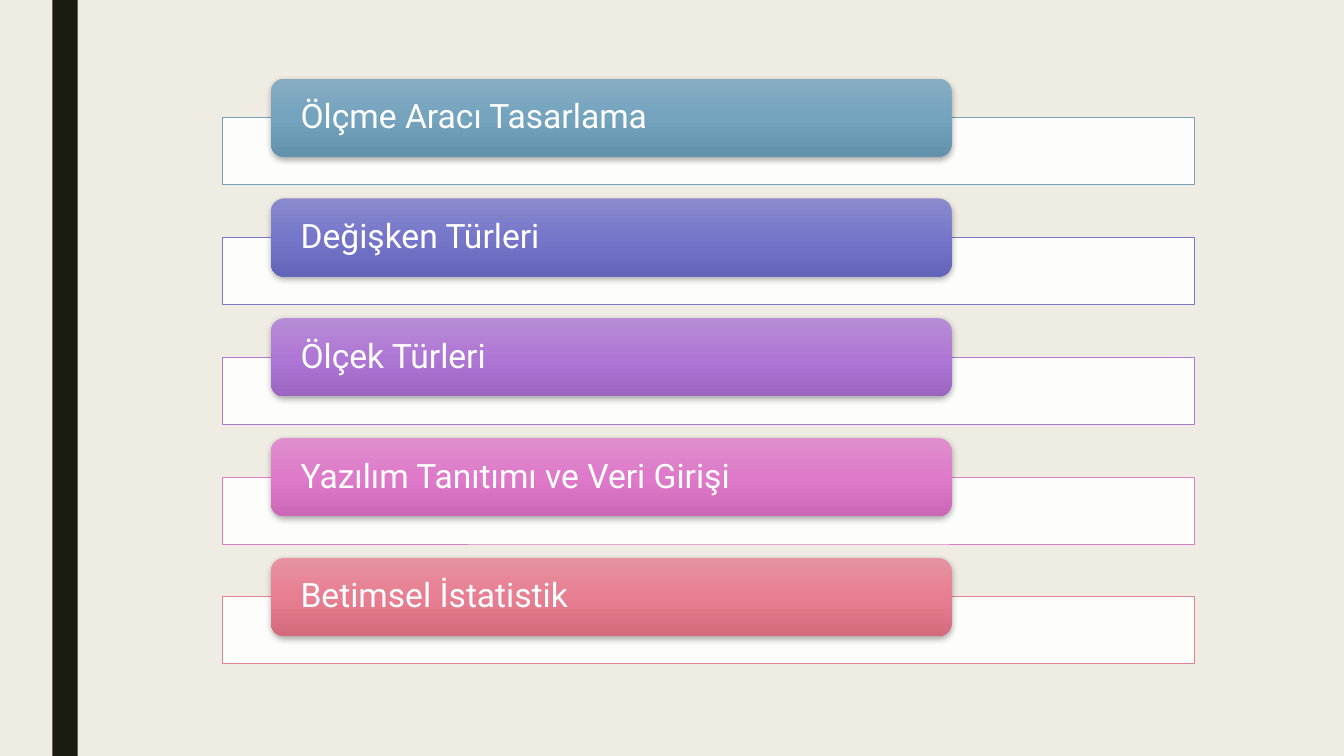
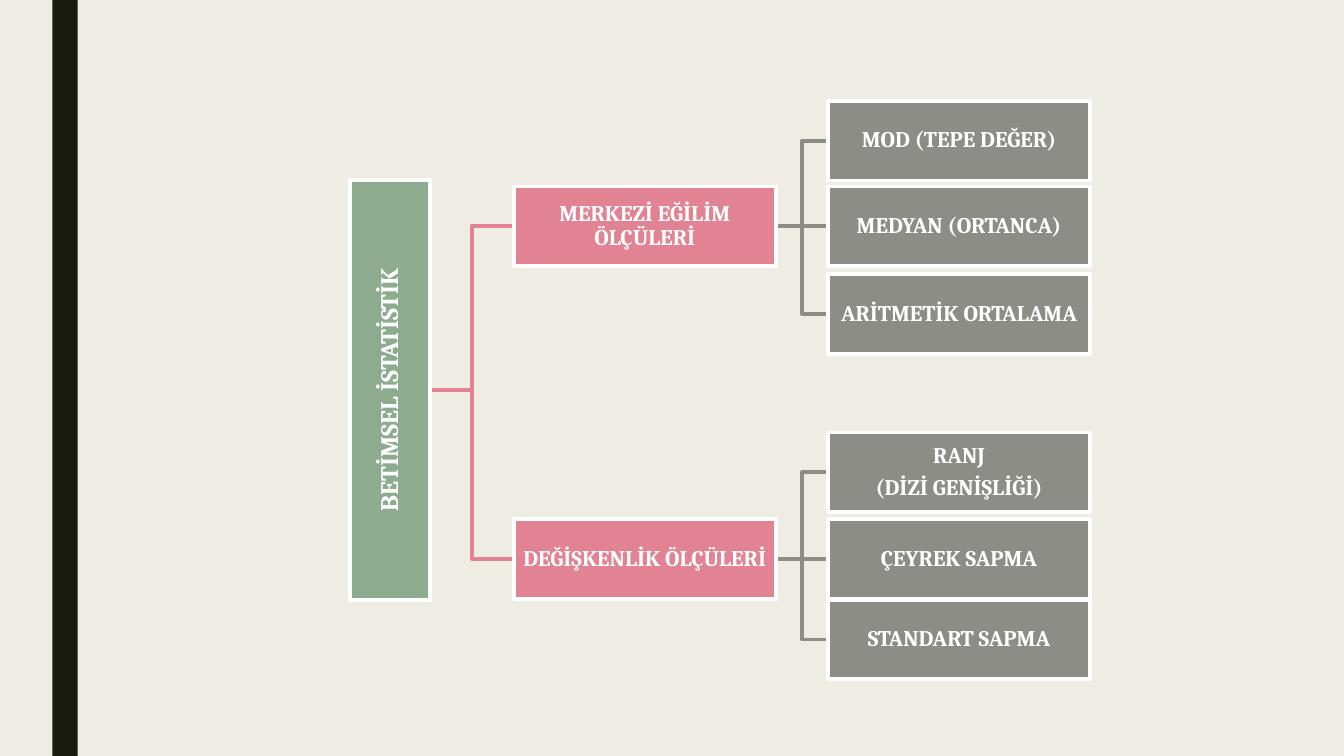
from dataclasses import dataclass

from lxml import etree
from pptx import Presentation, util as u
from pptx.dml.color import RGBColor
from pptx.enum import shapes, text
from pptx.oxml.ns import qn

TOPICS = [
    ("Ölçme Aracı Tasarlama", "77A2BB", ("88ADC3", "74A3BE", "6392AD")),
    ("Değişken Türleri", "797AC6", ("8A8BCD", "7576CA", "6365B8")),
    ("Ölçek Türleri", "AE7BD0", ("B78CD6", "AF77D5", "9C65C2")),
    ("Yazılım Tanıtımı ve Veri Girişi", "DA7FC7", ("DF8FCE", "DE7AC9", "CB67B6")),
    ("Betimsel İstatistik", "E28394", ("E793A2", "E77E91", "D36B7D")),
]

ROOT = "BETİMSEL İSTATİSTİK"
BRANCHES = [
    ("MERKEZİ EĞİLİM ÖLÇÜLERİ", 4.7, [
        ("MOD (TEPE DEĞER)", 2.54),
        ("MEDYAN (ORTANCA)", 4.7),
        ("ARİTMETİK ORTALAMA", 6.91),
    ]),
    ("DEĞİŞKENLİK ÖLÇÜLERİ", 13.08, [
        ("RANJ\n(DİZİ GENİŞLİĞİ)", 10.9),
        ("ÇEYREK SAPMA", 13.08),
        ("STANDART SAPMA", 15.11),
    ]),
]


@dataclass(frozen=True)
class Theme:
    background: str = "EFEDE3"
    band: str = "191B0E"
    white: str = "FFFFFF"
    shadow: str = "000000"
    root: str = "8DAB8E"
    branch: str = "E28394"
    leaf: str = "8C8D86"
    list_font: str = "Roboto"
    tree_font: str = "Cambria"
    list_size: float = 24
    root_size: float = 18
    node_size: float = 16
    thin: float = 0.5
    thick: float = 2.75


THEME = Theme()
SLIDE_SIZE = (33.87, 19.05)
BAND = (1.32, 0, 0.64, SLIDE_SIZE[1])

PANEL = (5.61, 2.96, 24.5, 1.69)
TAB = (6.83, 1.98, 17.15, 1.97)
TOPIC_PITCH = 3.02

ROOT_BOX = (8.82, 4.53, 2.01, 10.59)
BRANCH_LEFT, LEAF_LEFT = 12.95, 20.87
NODE_SIZE = (6.6, 2.01)
RIGHT_SITE, LEFT_SITE = 3, 1


def set_values(target, **values):
    for name, value in values.items():
        setattr(target, name, value)


def rgb(color):
    return RGBColor.from_string(color)


def add_xml(parent, tag, **attributes):
    return etree.SubElement(parent, qn(tag), attributes)


def add_box(slide, box, fill=None, line=None, width=THEME.thin, rounded=False):
    kind = shapes.MSO_SHAPE.ROUNDED_RECTANGLE if rounded else shapes.MSO_SHAPE.RECTANGLE
    shape = slide.shapes.add_shape(kind, *map(u.Cm, box))
    shape.shadow.inherit = False
    if fill:
        shape.fill.solid()
        shape.fill.fore_color.rgb = rgb(fill)
    if line:
        shape.line.color.rgb = rgb(line)
        shape.line.width = u.Pt(width)
    else:
        shape.line.fill.background()
    return shape


def write_text(shape, words, font, size, align, inset, bold=False):
    frame = shape.text_frame
    set_values(frame, text=words, word_wrap=True, vertical_anchor=text.MSO_ANCHOR.MIDDLE,
               margin_left=u.Cm(inset), margin_right=u.Cm(inset), margin_top=0, margin_bottom=0)
    for paragraph in frame.paragraphs:
        set_values(paragraph, alignment=align, line_spacing=0.9, space_after=u.Pt(size * 0.35))
        set_values(paragraph.font, name=font, size=u.Pt(size), bold=bold)
        paragraph.font.color.rgb = rgb(THEME.white)


def set_gradient(shape, colors):
    shape.fill.gradient()
    shape.fill.gradient_angle = 270
    stops = shape.element.spPr.find(".//" + qn("a:gsLst"))
    for stop in list(stops):
        stops.remove(stop)
    for index, color in enumerate(colors):
        stop = add_xml(stops, "a:gs", pos=str(index * 50000))
        add_xml(stop, "a:srgbClr", val=color)


def add_shadow(shape):
    effects = shape.element.spPr.find(qn("a:effectLst"))
    shadow = add_xml(effects, "a:outerShdw", blurRad=str(u.Pt(4.5)), dist=str(u.Pt(1.5)),
                     dir="5400000", algn="ctr", rotWithShape="0")
    add_xml(add_xml(shadow, "a:srgbClr", val=THEME.shadow), "a:alpha", val="35000")


def add_topics(slide):
    for index, (words, outline, gradient) in enumerate(TOPICS):
        offset = index * TOPIC_PITCH
        panel_box, tab_box = [(left, top + offset, width, height)
                              for left, top, width, height in (PANEL, TAB)]
        panel = add_box(slide, panel_box, THEME.white, outline)
        color = panel.element.spPr.find(qn("a:solidFill") + "/" + qn("a:srgbClr"))
        add_xml(color, "a:alpha", val="90000")
        tab = add_box(slide, tab_box, rounded=True)
        set_gradient(tab, gradient)
        add_shadow(tab)
        write_text(tab, words, THEME.list_font, THEME.list_size, text.PP_ALIGN.LEFT, 0.65)


def add_node(slide, words, box, fill, size=THEME.node_size):
    node = add_box(slide, box, fill, THEME.white, THEME.thick)
    write_text(node, words, THEME.tree_font, size, text.PP_ALIGN.CENTER, 0.03, bold=True)
    return node


def join(slide, parent, child, color):
    level = parent.top + parent.height // 2 == child.top + child.height // 2
    kind = shapes.MSO_CONNECTOR.STRAIGHT if level else shapes.MSO_CONNECTOR.ELBOW
    connector = slide.shapes.add_connector(kind, 0, 0, 0, 0)
    connector.begin_connect(parent, RIGHT_SITE)
    connector.end_connect(child, LEFT_SITE)
    connector.line.color.rgb = rgb(color)
    connector.line.width = u.Pt(THEME.thick)
    add_xml(connector.element.spPr, "a:effectLst")
    slide.element.cSld.spTree.insert(2, connector.element)


def add_tree(slide):
    root = add_node(slide, ROOT, ROOT_BOX, THEME.root, THEME.root_size)
    root.element.txBody.bodyPr.set("vert", "vert270")
    for words, top, leaves in BRANCHES:
        branch = add_node(slide, words, (BRANCH_LEFT, top, *NODE_SIZE), THEME.branch)
        join(slide, root, branch, THEME.branch)
        for leaf_words, leaf_top in leaves:
            leaf = add_node(slide, leaf_words, (LEAF_LEFT, leaf_top, *NODE_SIZE), THEME.leaf)
            join(slide, branch, leaf, THEME.leaf)


def style_master(presentation, slide):
    master = presentation.slide_master
    master.background.fill.solid()
    master.background.fill.fore_color.rgb = rgb(THEME.background)
    band = add_box(slide, BAND, THEME.band)
    master.element.cSld.spTree.insert(2, band.element)


def main():
    presentation = Presentation()
    presentation.slide_width, presentation.slide_height = map(u.Cm, SLIDE_SIZE)
    blank = presentation.slide_layouts[6]
    topics, tree = [presentation.slides.add_slide(blank) for _ in range(2)]
    style_master(presentation, topics)
    add_topics(topics)
    add_tree(tree)
    presentation.save("out.pptx")


if __name__ == "__main__":
    main()
